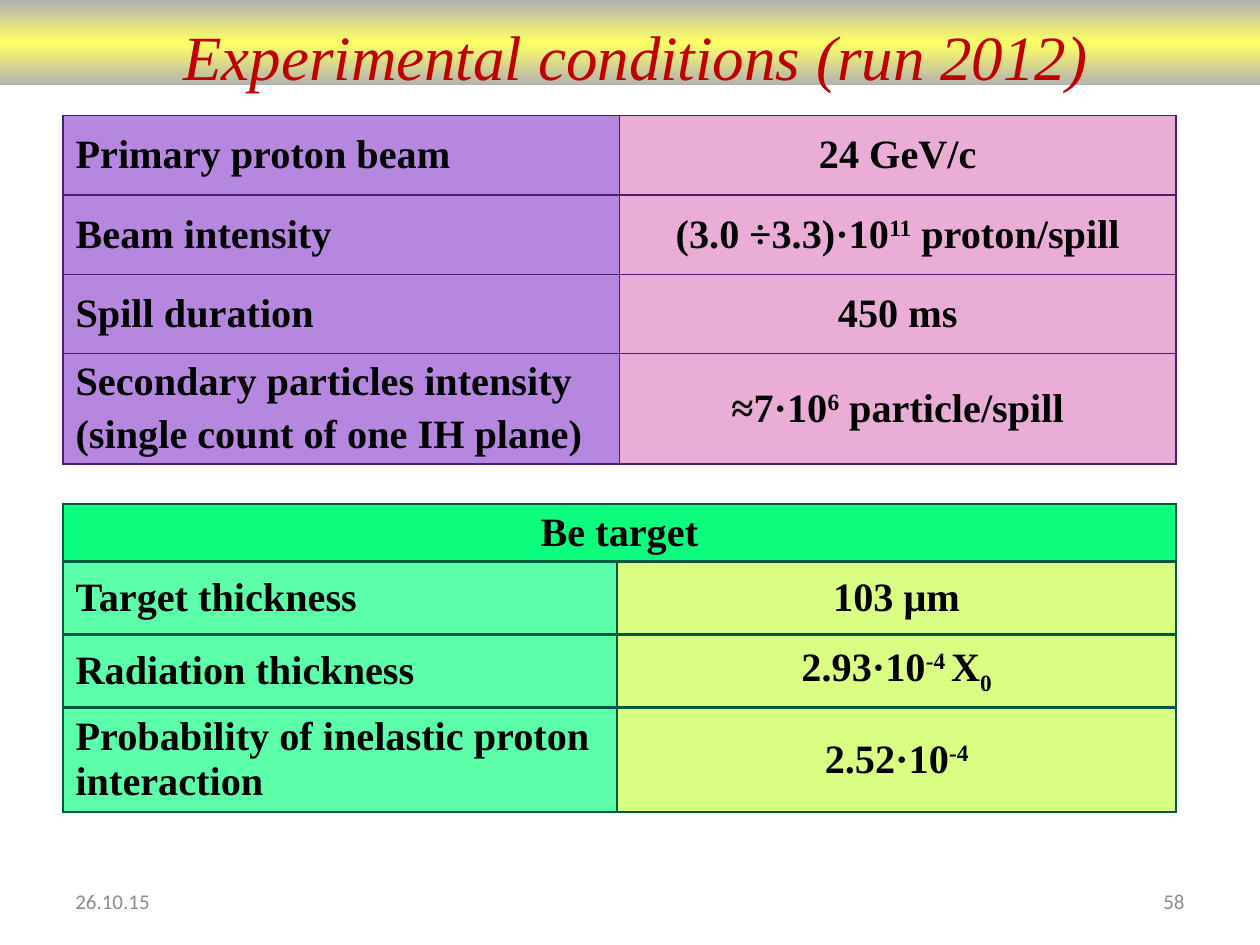
import copy

import lxml.etree
import pptx
import pptx.dml.color
import pptx.enum.shapes
import pptx.enum.text
import pptx.oxml.ns
import pptx.util

Cm, Pt = pptx.util.Cm, pptx.util.Pt
ALIGN = pptx.enum.text.PP_ALIGN
MIDDLE = pptx.enum.text.MSO_ANCHOR.MIDDLE

COLORS = {
    "title": "C00000", "text": "000000", "footer": "8C8C8C",
    "band_edge": "B2B2B2", "band_middle": "FFFF66",
    "beam_label": "B587DF", "beam_value": "EAAED6", "beam_border": "4A1E72",
    "target_head": "0DFD7F", "target_label": "5CFEA9",
    "target_value": "DAFD83", "target_border": "005841",
}
SUP, SUB = 30000, -25000
LEFT = 1.27

# Each value is a list of (text, baseline shift) runs.
BEAM = [
    ("Primary proton beam", [("24 GeV/c", 0)]),
    ("Beam intensity", [("(3.0 ÷3.3)·10", 0), ("11", SUP), (" proton/spill", 0)]),
    ("Spill duration", [("450 ms", 0)]),
    ("Secondary particles intensity\n(single count of one IH plane)",
     [("≈7·10", 0), ("6", SUP), (" particle/spill", 0)]),
]
TARGET_HEAD = "Be target"
TARGET = [
    ("Target thickness", [("103 μm", 0)]),
    ("Radiation thickness", [("2.93·10", 0), ("-4 ", SUP), ("X", 0), ("0", SUB)]),
    ("Probability of inelastic proton interaction", [("2.52·10", 0), ("-4", SUP)]),
]
FOOTERS = [("26.10.15", LEFT, ALIGN.LEFT), ("58", 18.21, ALIGN.RIGHT)]


def rgb(name):
    return pptx.dml.color.RGBColor.from_string(COLORS[name])


def style(p, font, size, color, align):
    p.alignment = align
    for r in p.runs:
        r.font.name, r.font.size = font, Pt(size)
        r.font.color.rgb = rgb(color)


def add_borders(cell, color, width):
    tcPr = cell._tc.get_or_add_tcPr()
    for i, side in enumerate(("lnL", "lnR", "lnT", "lnB")):
        ln = lxml.etree.Element(pptx.oxml.ns.qn("a:" + side), w=str(Pt(width)))
        fill = lxml.etree.SubElement(ln, pptx.oxml.ns.qn("a:solidFill"))
        lxml.etree.SubElement(fill, pptx.oxml.ns.qn("a:srgbClr"), val=COLORS[color])
        tcPr.insert(i, ln)


def fill_cell(cell, content, fill, align):
    """Write plain text, or a list of (text, baseline) runs, into a cell."""
    tf = cell.text_frame
    if isinstance(content, str):
        tf.text = content
    else:
        for text, baseline in content:
            r = tf.paragraphs[0].add_run()
            r.text = text
            if baseline:
                r._r.get_or_add_rPr().set("baseline", str(baseline))
    for p in tf.paragraphs:
        style(p, "Times New Roman", 23, "text", align)
        p.space_before = Pt(4.6)
        for r in p.runs:
            r.font.bold = True
    cell.vertical_anchor = MIDDLE
    cell.fill.solid()
    cell.fill.fore_color.rgb = rgb(fill)


def add_facts(s, kind, facts, top, widths, heights, border, head=None):
    """Add a label/value table, with an optional merged heading row."""
    table = s.shapes.add_table(len(heights), 2, Cm(LEFT), Cm(top),
                               Cm(sum(widths)), Cm(sum(heights))).table
    table.first_row = table.horz_banding = False
    for col, width in zip(table.columns, widths):
        col.width = Cm(width)
    for row, height in zip(table.rows, heights):
        row.height = Cm(height)
    if head:
        table.cell(0, 0).merge(table.cell(0, 1))
        fill_cell(table.cell(0, 0), head, kind + "_head", ALIGN.CENTER)
    for i, (label, value) in enumerate(facts, start=1 if head else 0):
        fill_cell(table.cell(i, 0), label, kind + "_label", ALIGN.LEFT)
        fill_cell(table.cell(i, 1), value, kind + "_value", ALIGN.CENTER)
    for cell in table.iter_cells():
        add_borders(cell, kind + "_border", border)


def add_band(s):
    sp = s.shapes.add_shape(pptx.enum.shapes.MSO_SHAPE.RECTANGLE,
                            Cm(-0.02), 0, Cm(25.42), Cm(1.72))
    sp.shadow.inherit = False
    sp.line.fill.background()
    sp.fill.gradient()
    sp.fill.gradient_angle = 90
    stops = sp._element.xpath(".//a:gsLst")[0]
    stops.append(copy.deepcopy(stops[-1]))
    names = ("band_edge", "band_middle", "band_edge")
    for i, (stop, name) in enumerate(zip(sp.fill.gradient_stops, names)):
        stop.position = i / 2
        stop.color.rgb = rgb(name)


def add_text(s, text, box, font, size, color, align):
    tf = s.shapes.add_textbox(*map(Cm, box)).text_frame
    tf.text = text
    style(tf.paragraphs[0], font, size, color, align)
    return tf


prs = pptx.Presentation()
prs.slide_width, prs.slide_height = Cm(25.4), Cm(19.05)
s = prs.slides.add_slide(prs.slide_layouts[6])

add_facts(s, "beam", BEAM, 2.33, (11.22, 11.22), (1.6, 1.6, 1.6, 2.2), 1)
add_facts(s, "target", TARGET, 10.16, (11.17, 11.27), (1.16, 1.47, 1.47, 2.11),
          1.5, TARGET_HEAD)
add_band(s)

tf = add_text(s, "Experimental conditions (run 2012)", (1.7, 0.23, 22.23, 1.27),
              "Times New Roman", 36, "title", ALIGN.CENTER)
tf.word_wrap = False
tf.paragraphs[0].runs[0].font.italic = True

for text, left, align in FOOTERS:
    tf = add_text(s, text, (left, 17.65, 5.92, 1.02), "Calibri", 12, "footer", align)
    tf.word_wrap = True
    tf.vertical_anchor = MIDDLE

prs.save("out.pptx")
